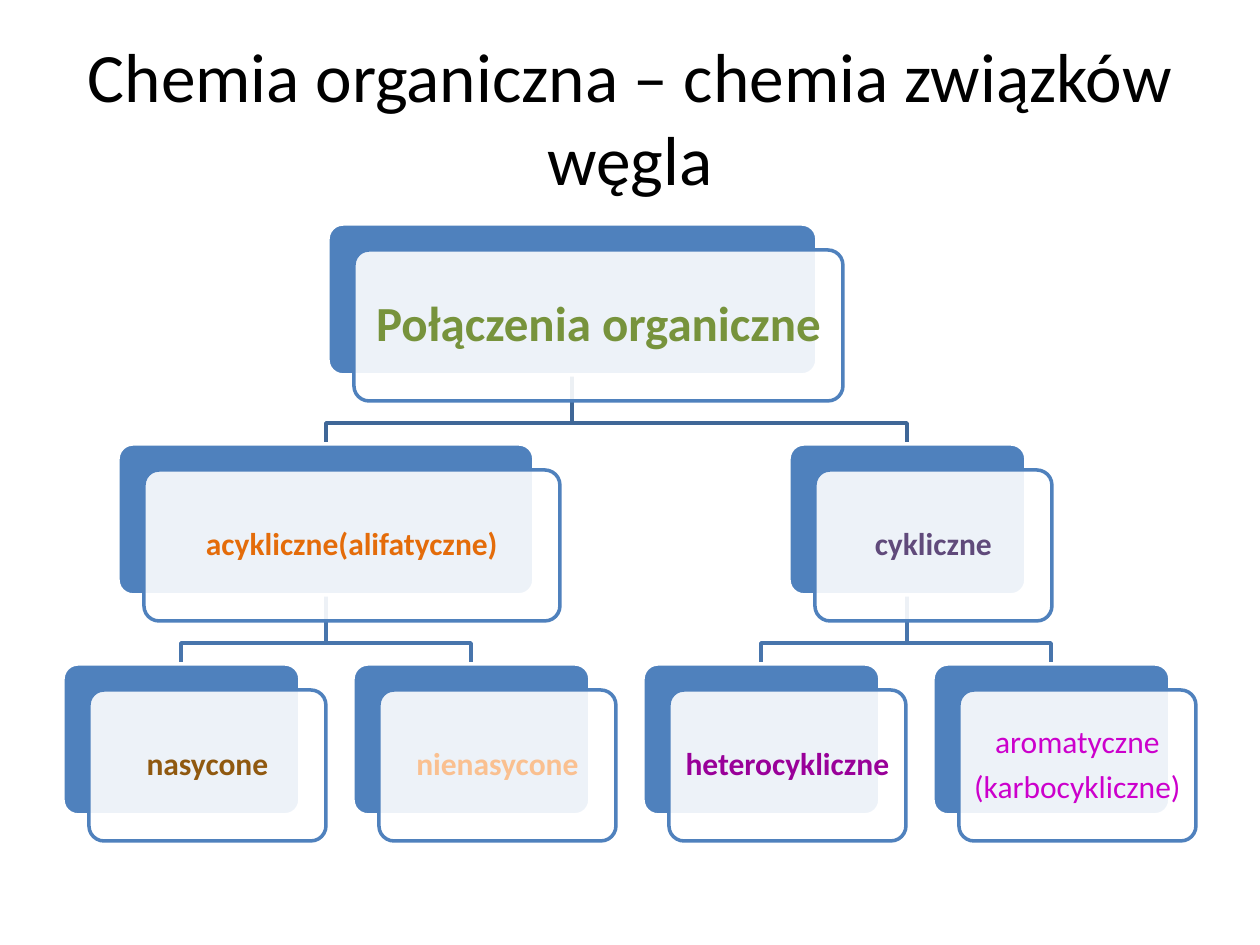
from dataclasses import dataclass
from typing import Optional

from lxml.etree import SubElement
from pptx import Presentation
from pptx.dml.color import RGBColor
from pptx.enum.shapes import MSO_SHAPE
from pptx.enum.text import MSO_ANCHOR, MSO_AUTO_SIZE, PP_ALIGN
from pptx.oxml.ns import qn
from pptx.util import Emu, Pt

EMU_PER_PX = 914400 / 126
FONT = "Calibri"
COLORS = {
    "black": "000000",
    "white": "FFFFFF",
    "blue": "4F81BD",
    "upper_link": "3F6797",
    "lower_link": "4875AC",
    "green": "77933C",
    "orange": "E46C0A",
    "violet": "604A7B",
    "brown": "905910",
    "peach": "FAC090",
    "purple": "990099",
    "magenta": "CC00CC",
}
FIRST_TOP, LEVEL_STEP, BOX_HEIGHT = 224, 220, 151
FIRST_LEAF, LEAF_STEP, LEAF_WIDTH = 181, 290, 237
FRONT_SHIFT, LINK_BEND = 26, 21


def px(length):
    return Emu(round(length * EMU_PER_PX))


def rgb(name):
    return RGBColor.from_string(COLORS[name])


@dataclass
class Node:
    lines: list
    color: str
    level: int
    center: int
    width: int = LEAF_WIDTH
    parent: Optional["Node"] = None
    size: int = 18
    inset: int = 9
    bold: bool = True

    @property
    def left(self):
        return self.center - self.width // 2

    @property
    def top(self):
        return FIRST_TOP + LEVEL_STEP * self.level


class TreeSlide:
    def __init__(self, deck):
        self.page = deck.slides.add_slide(deck.slide_layouts[5])

    def style_font(self, font, size, color, bold=False):
        font.name = FONT
        font.size = Pt(size)
        font.bold = bold
        font.color.rgb = rgb(color)

    def title(self, text, left, top, width, height):
        box = self.page.shapes.title
        box.left, box.top, box.width, box.height = map(px, (left, top, width, height))
        frame = box.text_frame
        frame.text = text
        frame.word_wrap = True
        frame.auto_size = MSO_AUTO_SIZE.NONE
        frame.vertical_anchor = MSO_ANCHOR.MIDDLE
        para = frame.paragraphs[0]
        para.alignment = PP_ALIGN.CENTER
        self.style_font(para.font, 39.6, "black")

    def link(self, parent, child):
        bend = child.top - LINK_BEND
        builder = self.page.shapes.build_freeform(
            parent.center, parent.top + BOX_HEIGHT, scale=EMU_PER_PX
        )
        builder.add_line_segments(
            [(parent.center, bend), (child.center, bend), (child.center, child.top)],
            close=False,
        )
        line = builder.convert_to_shape()
        line.shadow.inherit = False
        line.fill.background()
        line.line.color.rgb = rgb("lower_link" if parent.level else "upper_link")
        line.line.width = Pt(2)

    def card(self, left, top, width, fill, outline):
        box = self.page.shapes.add_shape(
            MSO_SHAPE.ROUNDED_RECTANGLE, px(left), px(top), px(width), px(BOX_HEIGHT)
        )
        box.adjustments[0] = 0.1
        box.shadow.inherit = False
        box.fill.solid()
        box.fill.fore_color.rgb = rgb(fill)
        box.line.color.rgb = rgb(outline)
        box.line.width = Pt(2)
        return box

    def node(self, node):
        self.card(node.left, node.top, node.width, "blue", "white")
        front = self.card(
            node.left + FRONT_SHIFT, node.top + FRONT_SHIFT, node.width, "white", "blue"
        )
        color = front.element.spPr.find(qn("a:solidFill")).find(qn("a:srgbClr"))
        SubElement(color, qn("a:alpha"), val="90000")
        self.label(front.text_frame, node)

    def label(self, frame, node):
        frame.word_wrap = True
        frame.vertical_anchor = MSO_ANCHOR.MIDDLE
        frame.margin_left = frame.margin_right = px(node.inset)
        frame.margin_top = frame.margin_bottom = px(node.inset)
        frame.text = "\n".join(node.lines)
        for para in frame.paragraphs:
            para.alignment = PP_ALIGN.CENTER
            para.line_spacing = 0.9
            para.space_after = Pt(round(node.size * 0.35, 1))
            self.style_font(para.font, node.size, node.color, node.bold)


def build_tree():
    root = Node(["Połączenia organiczne"], "green", 0, 572, 489, size=28, inset=15)
    acyclic = Node(["acykliczne(alifatyczne)"], "orange", 1, 326, 416, root)
    cyclic = Node(["cykliczne"], "violet", 1, 907, parent=root)
    leaves = [
        (acyclic, ["nasycone"], "brown", True),
        (acyclic, ["nienasycone"], "peach", True),
        (cyclic, ["heterocykliczne"], "purple", True),
        (cyclic, ["aromatyczne", "(karbocykliczne)"], "magenta", False),
    ]
    return [root, acyclic, cyclic] + [
        Node(lines, color, 2, FIRST_LEAF + LEAF_STEP * index, parent=parent, bold=bold)
        for index, (parent, lines, color, bold) in enumerate(leaves)
    ]


def main():
    deck = Presentation()
    deck.slide_width, deck.slide_height = px(1260), px(945)
    slide = TreeSlide(deck)
    slide.title("Chemia organiczna – chemia związków węgla", 63, 38, 1134, 157)
    nodes = build_tree()
    for node in nodes:
        if node.parent:
            slide.link(node.parent, node)
    for node in nodes:
        slide.node(node)
    deck.save("out.pptx")


if __name__ == "__main__":
    main()
